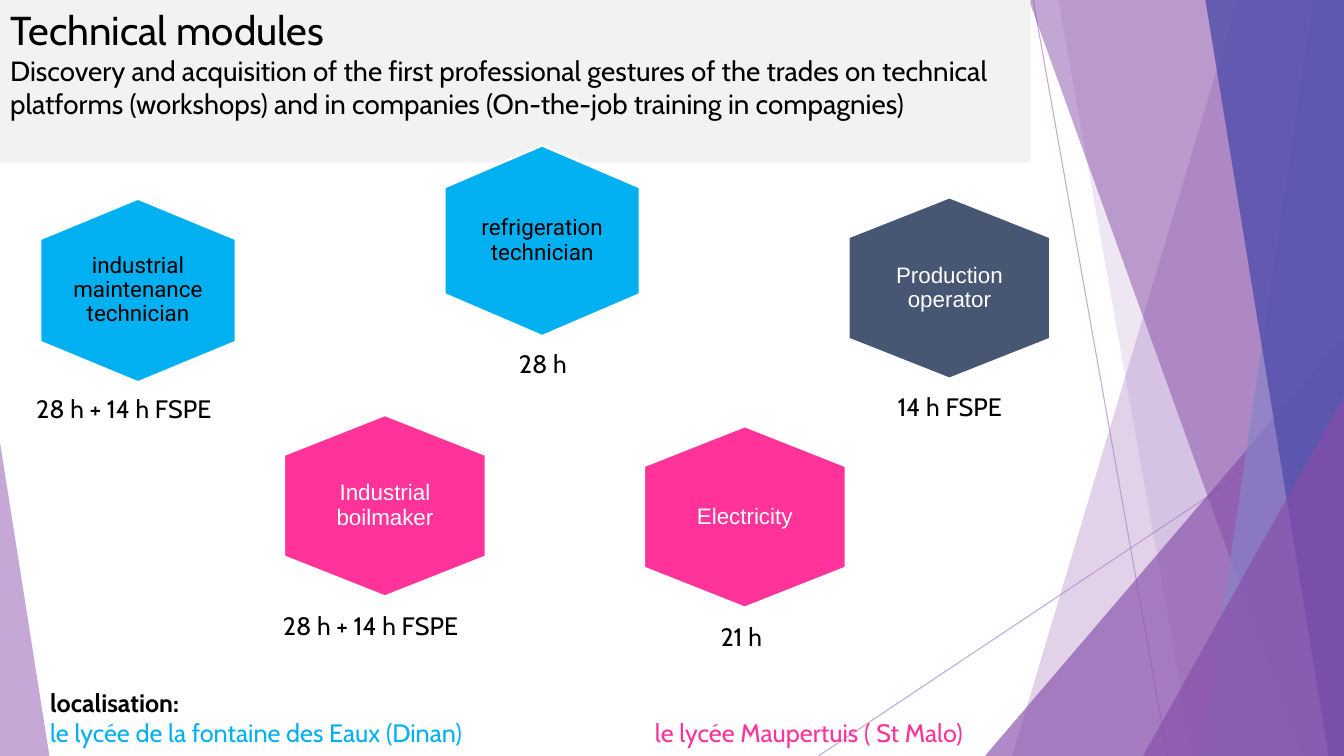
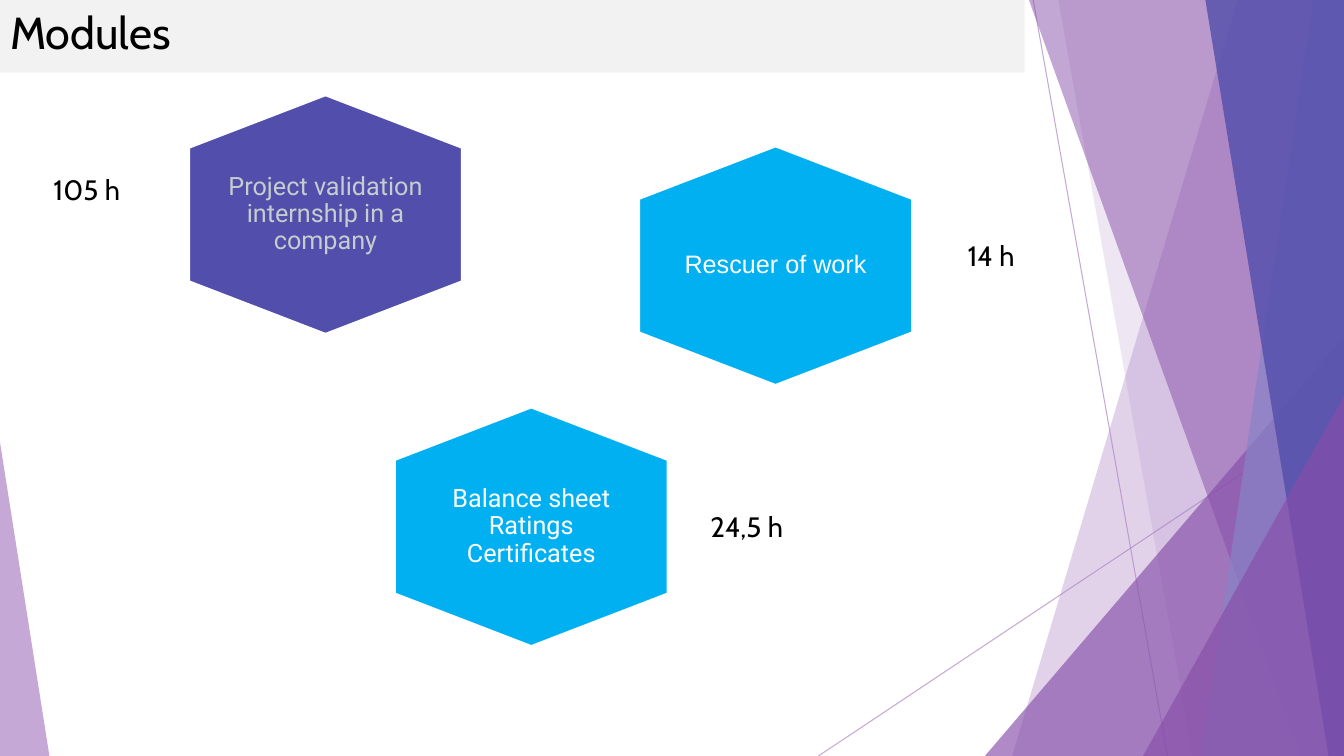
from lxml.etree import SubElement
from pptx import Presentation
from pptx.dml.color import RGBColor
from pptx.enum.shapes import MSO_CONNECTOR, MSO_SHAPE
from pptx.enum.text import MSO_ANCHOR, MSO_AUTO_SIZE, PP_ALIGN
from pptx.oxml.ns import qn
from pptx.util import Pt

WIDTH, HEIGHT = 960, 540
BLACK, WHITE, BAND = "000000", "FFFFFF", "F2F2F2"
BLUE, PINK, SLATE, INDIGO = "00B0F0", "FF3399", "465673", "524EAB"
LILAC, PURPLE, PERIWINKLE, SILVER = "AD84C6", "874EA9", "8784C7", "C5CDCE"
TEXT_FONT = "Cabin"
SHOULDER = 0.22  # share of a hexagon's height above its upright sides


def colour(value):
    return RGBColor.from_string(value)


def set_opacity(shape, percent):
    """Apply an opacity to the first solid colour of a shape or line."""
    mark = shape.element.find(f".//{qn('a:srgbClr')}")
    SubElement(mark, qn("a:alpha"), val=str(percent * 1000))


class Deck:
    """Holds the shared style and the slide being filled."""

    def __init__(self):
        self.file = Presentation()
        self.file.slide_width, self.file.slide_height = Pt(WIDTH), Pt(HEIGHT)
        self.layout = self.file.slide_layouts[5]
        self.page = None

    def add_page(self):
        self.page = self.file.slides.add_slide(self.layout)

    def outline(self, shapes, points):
        corners = [(Pt(x), Pt(y)) for x, y in points]
        builder = shapes.build_freeform(*corners[0], scale=1.0)
        builder.add_line_segments(corners[1:], close=True)
        return builder.convert_to_shape()

    def paint(self, shape, fill, opacity=100):
        shape.shadow.inherit = False
        shape.fill.solid()
        shape.fill.fore_color.rgb = colour(fill)
        shape.line.fill.background()
        if opacity < 100:
            set_opacity(shape, opacity)

    def span(self, para, text, size, ink=BLACK, font=TEXT_FONT, bold=False):
        run = para.add_run()
        run.text = text
        run.font.name, run.font.size, run.font.bold = font, Pt(size), bold
        run.font.color.rgb = colour(ink)

    def ray(self, group, start, end):
        line = group.shapes.add_connector(
            MSO_CONNECTOR.STRAIGHT, *(Pt(value) for value in start + end))
        line.line.width = Pt(0.75)
        line.line.color.rgb = colour(LILAC)
        set_opacity(line, 70)
        SubElement(line.element.find(qn("p:spPr")), qn("a:effectLst"))

    def ribbon(self, group, top_x, bottom_x, fill, opacity):
        """Fill the page from a slanted edge to its right side."""
        points = [(top_x, 0), (WIDTH, 0), (WIDTH, HEIGHT), (bottom_x, HEIGHT)]
        self.paint(self.outline(group.shapes, points), fill, opacity)

    def wedge(self, group, left, top, width, apex, fill, opacity):
        """Draw a triangle that stands on the bottom of the page."""
        shape = group.shapes.add_shape(
            MSO_SHAPE.ISOSCELES_TRIANGLE,
            Pt(left), Pt(top), Pt(width), Pt(HEIGHT - top))
        shape.adjustments[0] = apex
        self.paint(shape, fill, opacity)

    def backdrop(self):
        """Build the facets once and move them to the shared layout."""
        group = self.page.shapes.add_group_shape()
        self.ray(group, (738, 0), (834, HEIGHT))
        self.ray(group, (WIDTH, 290), (584.6, HEIGHT))
        self.ribbon(group, 884, 723, LILAC, 36)
        self.ribbon(group, 756, 852, LILAC, 20)
        self.wedge(group, 703.5, 240, 256.5, 1, PURPLE, 66)
        self.ribbon(group, 735, 929.5, PURPLE, 50)
        self.ribbon(group, 938, 858, PERIWINKLE, 70)
        self.ribbon(group, 861, 949, INDIGO, 80)
        self.wedge(group, 816.5, 283, 143.5, 1, PURPLE, 66)
        self.wedge(group, 0, 316, 35.3, 0, LILAC, 70)
        for number, mark in enumerate(group.element.iter(qn("p:cNvPr")), 100):
            mark.set("id", str(number))
        self.layout.shapes.element.append(group.element)

    def title(self, width, height, *lines):
        """Set the title band; each line is a (text, size) pair."""
        box = self.page.shapes.title
        box.left, box.top = Pt(0), Pt(0)
        box.width, box.height = Pt(width), Pt(height)
        box.fill.solid()
        box.fill.fore_color.rgb = colour(BAND)
        frame = box.text_frame
        frame.auto_size = MSO_AUTO_SIZE.NONE
        frame.vertical_anchor = MSO_ANCHOR.TOP
        para = frame.paragraphs[0]
        para.alignment = PP_ALIGN.LEFT
        for index, (text, size) in enumerate(lines):
            if index:
                para.add_line_break()
            self.span(para, text, size)

    def hexagon(self, left, top, width, height, fill, text, size, font, ink):
        middle, right, bottom = left + width / 2, left + width, top + height
        upper, lower = top + SHOULDER * height, bottom - SHOULDER * height
        shape = self.outline(self.page.shapes, [
            (middle, top), (right, upper), (right, lower),
            (middle, bottom), (left, lower), (left, upper)])
        self.paint(shape, fill)
        shape.line.color.rgb = colour(WHITE)
        shape.line.width = Pt(1.5)
        frame = shape.text_frame
        frame.word_wrap = True
        frame.vertical_anchor = MSO_ANCHOR.MIDDLE
        frame.margin_left = frame.margin_right = Pt(22)
        frame.margin_top = frame.margin_bottom = Pt(25)
        para = frame.paragraphs[0]
        para.alignment = PP_ALIGN.CENTER
        para.line_spacing = 0.9
        self.span(para, text, size, ink, font)

    def text_box(self, left, top, width, height):
        box = self.page.shapes.add_textbox(Pt(left), Pt(top), Pt(width), Pt(height))
        box.text_frame.word_wrap = True
        box.text_frame.auto_size = MSO_AUTO_SIZE.SHAPE_TO_FIT_TEXT
        return box.text_frame

    def duration(self, left, top, width, text, size, align=PP_ALIGN.LEFT):
        para = self.text_box(left, top, width, size * 1.6).paragraphs[0]
        para.alignment = align
        self.span(para, text, size)

    def locations(self, left, top, width, heading, places, tab):
        """List (name, colour) places on one line, parted by a tab stop."""
        frame = self.text_box(left, top, width, 51)
        self.span(frame.paragraphs[0], heading, 18, bold=True)
        para = frame.add_paragraph()
        stops = SubElement(para._p.get_or_add_pPr(), qn("a:tabLst"))
        SubElement(stops, qn("a:tab"), pos=str(Pt(tab)), algn="l")
        for index, (name, ink) in enumerate(places):
            self.span(para, "\t" + name if index else name, 18, ink)


def technical_modules(deck):
    deck.title(
        736, 116, ("Technical modules", 28.8),
        ("Discovery and acquisition of the first professional gestures of the "
         "trades on technical platforms (workshops) and in companies "
         "(On-the-job training in compagnies)", 19.8))
    deck.locations(
        28.8, 487.4, 789, "localisation:",
        [("le lycée de la fontaine des Eaux (Dinan)", BLUE),
         ("le lycée Maupertuis ( St Malo)", PINK)], tab=432)
    for left, top, width, height, fill, text, font, ink in [
            (28.8, 142, 139.5, 131, BLUE, "industrial maintenance technician", "Roboto", BLACK),
            (317.5, 104, 139.5, 136, BLUE, "refrigeration technician", "Roboto", BLACK),
            (460, 304.5, 144, 129.5, PINK, "Electricity", "Arial", WHITE),
            (203, 296.5, 144, 129.5, PINK, "Industrial boilmaker", "Arial", WHITE),
            (606.2, 141, 144, 129.5, SLATE, "Production operator", "Arial", WHITE)]:
        deck.hexagon(left, top, width, height, fill, text, 16, font, ink)
    for left, top, width, text, align in [
            (18.7, 277.2, 160.6, "28 h + 14 h FSPE", PP_ALIGN.LEFT),
            (507.6, 440, 108.7, "21 h", PP_ALIGN.LEFT),
            (195, 432.7, 160.6, "28 h + 14 h FSPE", PP_ALIGN.LEFT),
            (340.6, 245.5, 94.3, "28 h", PP_ALIGN.CENTER),
            (625, 275.8, 106.6, "14 h FSPE", PP_ALIGN.CENTER)]:
        deck.duration(left, top, width, text, 18, align)


def other_modules(deck):
    deck.title(732, 52, ("Modules", 32))
    for left, top, fill, text, font, ink in [
            (135, 68, INDIGO, "Project validation internship in a company", "Roboto", SILVER),
            (282, 291, BLUE, "Balance sheet Ratings Certificates", "Roboto", WHITE),
            (456.5, 104.5, BLUE, "Rescuer of work", "Arial", WHITE)]:
        deck.hexagon(left, top, 195, 170.5, fill, text, 18, font, ink)
    for left, top, width, text in [
            (31, 120, 78.5, "105 h"),
            (684, 167, 62, "14 h"),
            (500.4, 360.7, 137.5, "24,5 h")]:
        deck.duration(left, top, width, text, 20)


def main():
    deck = Deck()
    deck.add_page()
    deck.backdrop()
    technical_modules(deck)
    deck.add_page()
    other_modules(deck)
    deck.file.save("out.pptx")


if __name__ == "__main__":
    main()
